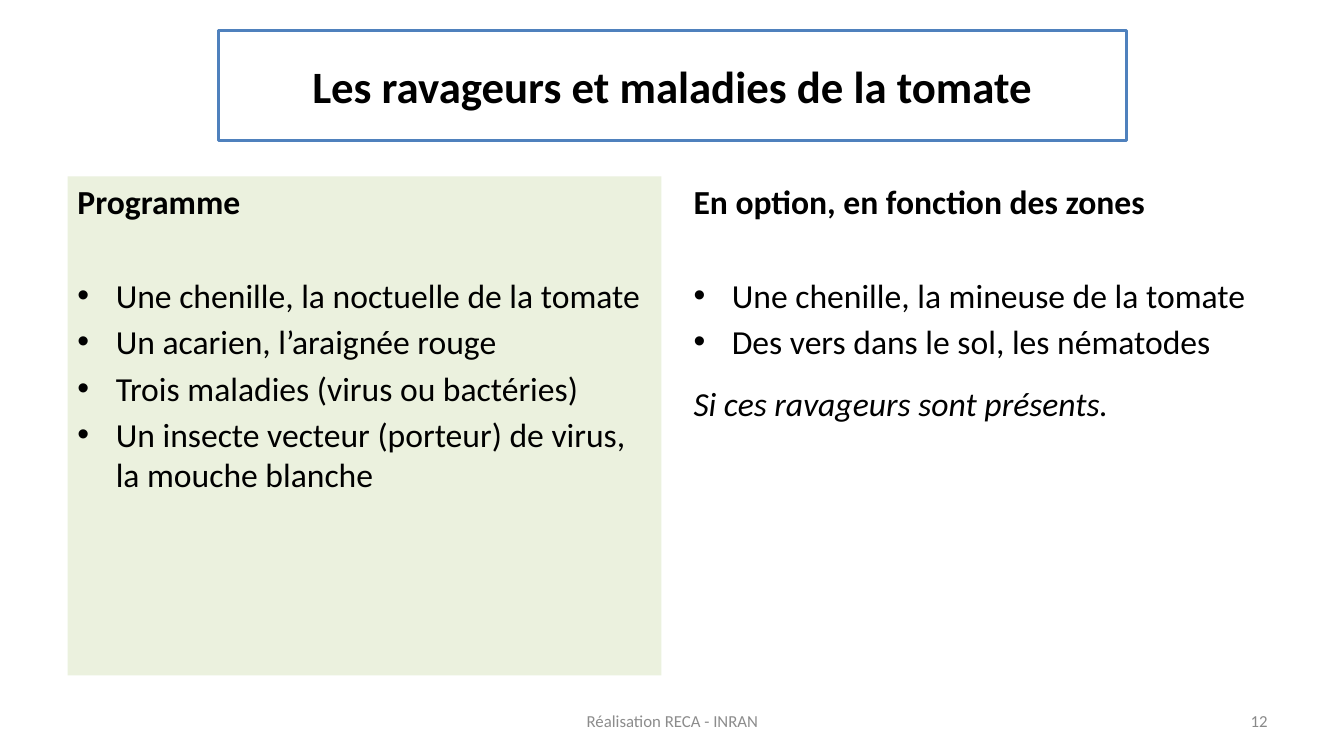
from pptx import Presentation
from pptx.dml.color import RGBColor
from pptx.enum.shapes import MSO_SHAPE
from pptx.enum.text import MSO_ANCHOR, PP_ALIGN
from pptx.oxml.ns import qn
from pptx.util import Inches, Pt

RECT = MSO_SHAPE.RECTANGLE
TOP, MID = MSO_ANCHOR.TOP, MSO_ANCHOR.MIDDLE
LEFT, CENTER, RIGHT = PP_ALIGN.LEFT, PP_ALIGN.CENTER, PP_ALIGN.RIGHT

FONT = "Calibri"
BLACK = "000000"
TITLE = "Les ravageurs et maladies de la tomate"
COLS = [
    {
        "head": "Programme",
        "items": [
            "Une chenille, la noctuelle de la tomate",
            "Un acarien, l’araignée rouge",
            "Trois maladies (virus ou bactéries)",
            "Un insecte vecteur (porteur) de virus, la mouche blanche",
        ],
        "note": None,
        "fill": "EBF1DE",
    },
    {
        "head": "En option, en fonction des zones",
        "items": [
            "Une chenille, la mineuse de la tomate",
            "Des vers dans le sol, les nématodes",
        ],
        "note": "Si ces ravageurs sont présents.",
        "fill": None,
    },
]
FOOTER = [
    ("12", 9.56, 3.11, RIGHT, "898989"),
    ("Réalisation RECA - INRAN", 4.56, 4.22, CENTER, "8C8C8C"),
]
COL_X, COL_Y, COL_W, COL_H, COL_GAP = 0.67, 1.75, 5.89, 4.95, 0.22
HANG = 0.38
GAP, HEAD_GAP, NOTE_GAP = 4.3, 37.9, 15


def rgb(code):
    return RGBColor.from_string(code)


def add_box(slide, x, y, w, h, anchor, fill=None, line=None):
    place = [Inches(n) for n in (x, y, w, h)]
    if fill or line:
        box = slide.shapes.add_shape(RECT, *place)
        box.shadow.inherit = False
        if fill:
            box.fill.solid()
            box.fill.fore_color.rgb = rgb(fill)
        else:
            box.fill.background()
        if line:
            box.line.color.rgb = rgb(line)
            box.line.width = Pt(2.25)
        else:
            box.line.fill.background()
    else:
        box = slide.shapes.add_textbox(*place)
    frame = box.text_frame
    frame.word_wrap = True
    frame.vertical_anchor = anchor
    return frame


def add_text(para, text, size, color=BLACK, align=LEFT, before=0,
             bold=False, italic=False):
    para.alignment = align
    para.space_before = Pt(before)
    run = para.add_run()
    run.text = text
    font = run.font
    font.name, font.size = FONT, Pt(size)
    font.bold, font.italic = bold, italic
    font.color.rgb = rgb(color)


def add_bullet(para):
    props = para._p.get_or_add_pPr()
    props.set("marL", str(Inches(HANG)))
    props.set("indent", str(-Inches(HANG)))
    face = props.makeelement(qn("a:buFont"), {"typeface": "Arial"})
    mark = props.makeelement(qn("a:buChar"), {"char": "•"})
    props.extend([face, mark])


def add_col(slide, x, col):
    frame = add_box(slide, x, COL_Y, COL_W, COL_H, TOP, col["fill"])
    add_text(frame.paragraphs[0], col["head"], 24, before=GAP, bold=True)
    for i, item in enumerate(col["items"]):
        para = frame.add_paragraph()
        add_text(para, item, 24, before=GAP if i else HEAD_GAP)
        add_bullet(para)
    if col["note"]:
        add_text(frame.add_paragraph(), col["note"], 24,
                 before=NOTE_GAP, italic=True)


def main():
    deck = Presentation()
    deck.slide_width, deck.slide_height = Inches(13.33), Inches(7.5)
    slide = deck.slides.add_slide(deck.slide_layouts[6])
    frame = add_box(slide, 2.17, 0.3, 9, 1.09, MID, line="4F81BD")
    add_text(frame.paragraphs[0], TITLE, 32, align=CENTER, bold=True)
    for i, col in enumerate(COLS):
        add_col(slide, COL_X + i * (COL_W + COL_GAP), col)
    for text, x, w, align, color in FOOTER:
        frame = add_box(slide, x, 6.95, w, 0.4, MID)
        add_text(frame.paragraphs[0], text, 12, color, align)
    deck.save("out.pptx")


if __name__ == "__main__":
    main()
